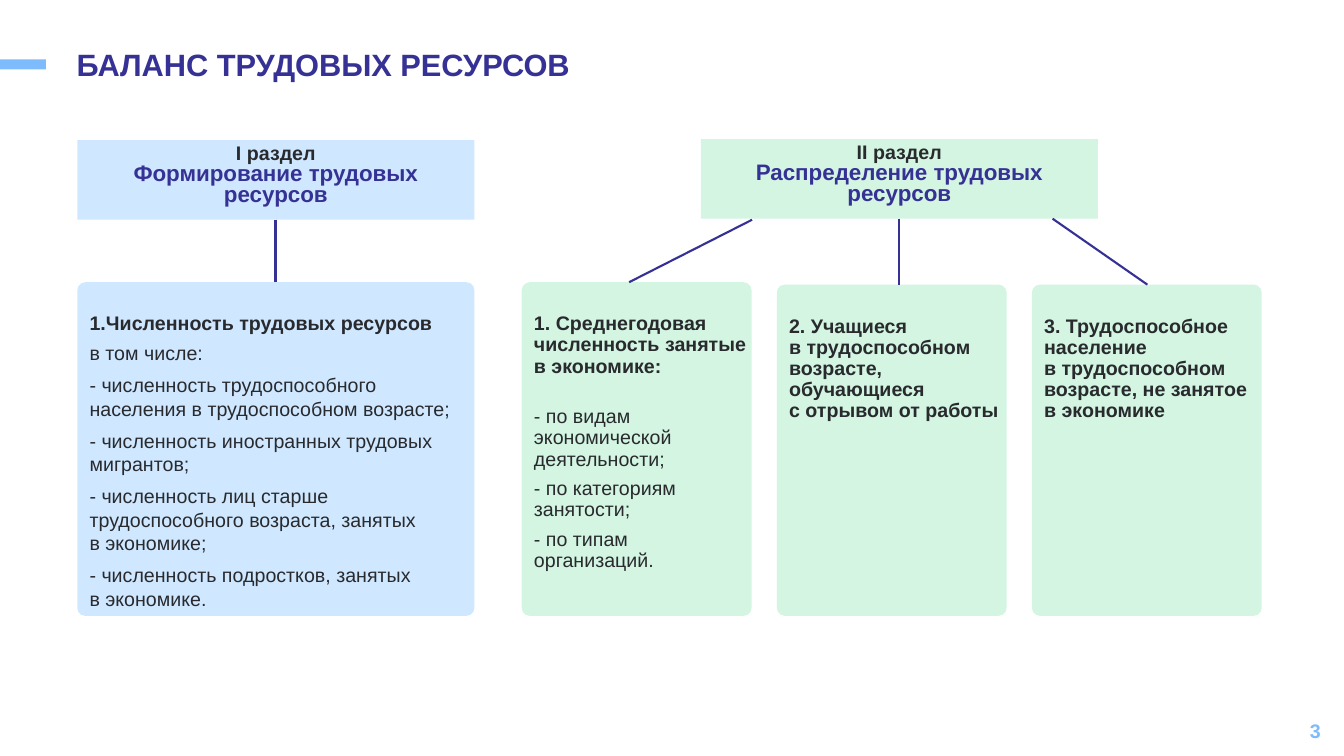
from copy import deepcopy
from dataclasses import dataclass

from lxml import etree
from pptx import Presentation
from pptx.dml.color import RGBColor
from pptx.enum.shapes import MSO_CONNECTOR, MSO_SHAPE
from pptx.enum.text import MSO_ANCHOR, PP_ALIGN
from pptx.oxml.ns import qn
from pptx.util import Inches, Pt

RECTANGLE = MSO_SHAPE.RECTANGLE
ROUNDED = MSO_SHAPE.ROUNDED_RECTANGLE
STRAIGHT = MSO_CONNECTOR.STRAIGHT
TOP, MIDDLE = MSO_ANCHOR.TOP, MSO_ANCHOR.MIDDLE
LEFT, CENTER, RIGHT = PP_ALIGN.LEFT, PP_ALIGN.CENTER, PP_ALIGN.RIGHT
TITLE_ONLY = 5


@dataclass(frozen=True)
class Theme:
    """Fonts, colours, type sizes and spacing of the deck."""
    font: str = "Arial"
    indigo: str = "363194"
    ink: str = "282A2E"
    sky: str = "7DBBFC"
    blue: str = "CFE8FF"
    green: str = "D3F5E2"
    title: int = 22
    heading: int = 16
    body: int = 14
    gap: int = 6
    wide_gap: int = 21
    radius: float = 0.08


class BalancePage:
    """Draws elements on one slide, measured in hundredths of its size."""

    def __init__(self, deck, theme):
        self.theme = theme
        self.column = deck.slide_width / 100
        self.row = deck.slide_height / 100
        self.page = deck.slides.add_slide(deck.slide_layouts[TITLE_ONLY])

    def frame(self, left, top, width, height):
        """Turn shares of the slide into lengths."""
        return (int(left * self.column), int(top * self.row),
                int(width * self.column), int(height * self.row))

    def style(self, span, size, color, bold=True):
        """Format one run."""
        span.font.name = self.theme.font
        span.font.size = Pt(size)
        span.font.bold = bold
        span.font.color.rgb = RGBColor.from_string(color)

    def set_text(self, para, text, styles, align=LEFT, spacing=1.0, before=0):
        """Fill a paragraph and give each of its lines a style."""
        para.text = text
        para.alignment = align
        para.line_spacing = spacing
        para.space_before = Pt(before)
        for index, span in enumerate(para.runs):
            self.style(span, *styles[min(index, len(styles) - 1)])
        for line_break in para._p.findall(qn("a:br")):
            line_break.insert(0, deepcopy(para._p.find(qn("a:r")).find(qn("a:rPr"))))

    def block(self, kind, area, color):
        """Add a filled shape without outline or shadow."""
        box = self.page.shapes.add_shape(kind, *self.frame(*area))
        box.shadow.inherit = False
        box.fill.solid()
        box.fill.fore_color.rgb = RGBColor.from_string(color)
        box.line.fill.background()
        box.text_frame.word_wrap = True
        box.text_frame.vertical_anchor = TOP
        return box

    def title(self, area, text):
        """Place the slide title."""
        box = self.page.shapes.title
        box.left, box.top, box.width, box.height = self.frame(*area)
        box.text_frame.vertical_anchor = TOP
        self.set_text(box.text_frame.paragraphs[0], text,
                      [(self.theme.title, self.theme.indigo)], spacing=0.9)

    def number(self, area, text):
        """Place the page number."""
        box = self.page.shapes.add_textbox(*self.frame(*area))
        box.text_frame.word_wrap = True
        box.text_frame.vertical_anchor = MIDDLE
        self.set_text(box.text_frame.paragraphs[0], text,
                      [(self.theme.body, self.theme.sky)], align=RIGHT)

    def section(self, area, color, text):
        """Add a section header with its number above its name."""
        box = self.block(RECTANGLE, area, color)
        styles = [(self.theme.body, self.theme.ink),
                  (self.theme.heading, self.theme.indigo)]
        self.set_text(box.text_frame.paragraphs[0], text, styles, CENTER, 0.8)

    def card(self, area, color, lines):
        """Add a rounded card whose first line is its bold heading."""
        box = self.block(ROUNDED, area, color)
        box.adjustments[0] = Inches(self.theme.radius) / min(box.width, box.height)
        body = box.text_frame
        body.margin_left, body.margin_top = Inches(0.1), Inches(0.29)
        body.margin_right = body.margin_bottom = 0
        for index, (text, spacing, before) in enumerate(lines):
            para = body.add_paragraph() if index else body.paragraphs[0]
            self.set_text(para, text, [(self.theme.body, self.theme.ink, index == 0)],
                          spacing=spacing, before=before)

    def link(self, start, end):
        """Join a section to a card."""
        line = self.page.shapes.add_connector(
            STRAIGHT, *self.frame(*start, *end))
        line.line.color.rgb = RGBColor.from_string(self.theme.indigo)
        line.line.width = Pt(1.5)
        etree.SubElement(line._element.spPr, qn("a:effectLst"))


def main():
    """Build and save the labour balance slide."""
    deck = Presentation()
    deck.slide_width, deck.slide_height = Inches(13.33), Inches(7.5)
    theme = Theme()
    balance = BalancePage(deck, theme)
    gap = theme.gap

    balance.block(RECTANGLE, (0, 7.87, 3.42, 1.33), theme.sky)
    balance.number((76.52, 94, 22.5, 5.33), "3")
    balance.title((4.95, 6, 64.97, 7.6), "БАЛАНС ТРУДОВЫХ РЕСУРСОВ")

    balance.section((5.75, 18.53, 29.55, 10.53), theme.blue,
                    "I раздел\nФормирование трудовых ресурсов")
    balance.section((52.14, 18.4, 29.55, 10.53), theme.green,
                    "II раздел\nРаспределение трудовых ресурсов")

    bottom = 81.47
    balance.card((5.75, 37.33, 29.55, bottom - 37.33), theme.blue, [
        ("1.Численность трудовых ресурсов", 0.9, 0),
        ("в том числе:", 0.9, gap),
        ("- численность трудоспособного населения в трудоспособном возрасте;", 1.0, gap),
        ("- численность иностранных трудовых мигрантов;", 1.0, gap),
        ("- численность лиц старше трудоспособного возраста, занятых\nв экономике;", 1.0, gap),
        ("- численность подростков, занятых\nв экономике.", 1.0, gap),
    ])

    distribution = [
        (37.33, [
            ("1. Среднегодовая численность занятые\nв экономике:", 0.9, 0),
            ("- по видам экономической деятельности;", 0.9, theme.wide_gap),
            ("- по категориям занятости;", 0.9, gap),
            ("- по типам организаций.", 0.9, gap),
        ]),
        (37.65, [("2. Учащиеся\nв трудоспособном возрасте, обучающиеся\n"
                  "с отрывом от работы", 0.9, 0)]),
        (37.65, [("3. Трудоспособное население\nв трудоспособном возрасте, "
                  "не занятое в экономике", 0.9, 0)]),
    ]
    for index, (top, lines) in enumerate(distribution):
        area = (38.82 + 18.98 * index, top, 17.1, bottom - top)
        balance.card(area, theme.green, lines)

    for start, end in [((20.5, 29.07), (20.5, 37.33)),
                       ((55.96, 29.07), (46.81, 37.33)),
                       ((66.92, 28.93), (66.92, 37.65)),
                       ((78.32, 28.93), (85.37, 37.65))]:
        balance.link(start, end)

    deck.save("out.pptx")


if __name__ == "__main__":
    main()
